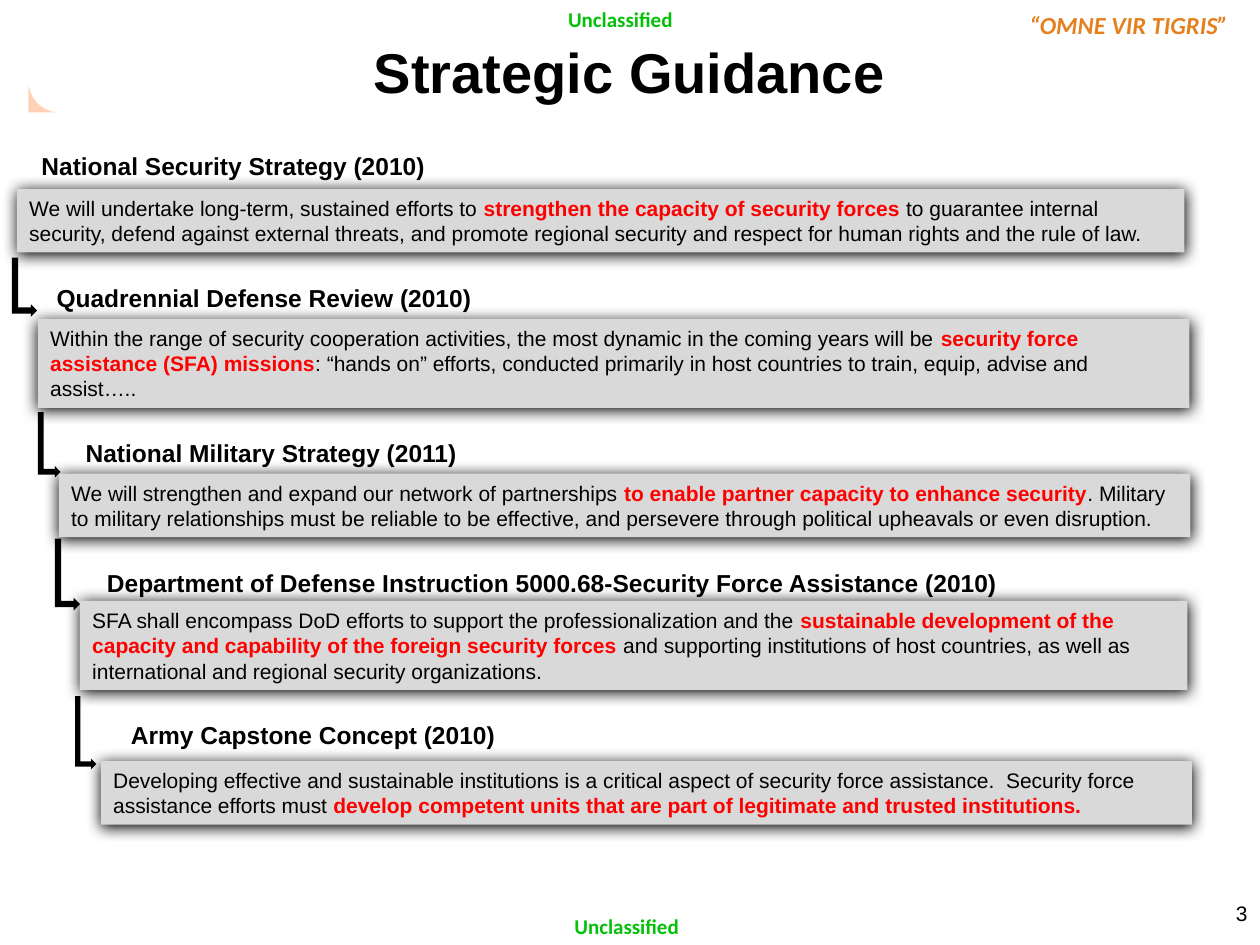
import pptx
import pptx.util
import pptx.dml.color
import pptx.enum.shapes
import pptx.enum.text
import pptx.oxml
import pptx.oxml.ns

Pt = pptx.util.Pt
RGB = pptx.dml.color.RGBColor
Shape = pptx.enum.shapes.MSO_SHAPE
Align = pptx.enum.text.PP_ALIGN

BLACK = RGB(0x00, 0x00, 0x00)
RED = RGB(0xFF, 0x00, 0x00)
GRAY = RGB(0xD9, 0xD9, 0xD9)
GREEN = RGB(0x04, 0xC0, 0x08)
ORANGE = RGB(0xE4, 0x81, 0x1E)
FLAME = RGB(0xFF, 0x66, 0x00)

# Heading, its (left, top, width); quote parts, their box (left, top, width, height)
# Every second part of a quote is stressed.
STEPS = [
    ("National Security Strategy (2010)", (16.6, 82.8, 703.4),
     ["We will undertake long-term, sustained efforts to ",
      "strengthen the capacity of security forces ",
      "to guarantee internal security, defend against external threats, and promote "
      "regional security and respect for human rights and the rule of law."],
     (9.6, 108, 667.2, 36.3)),
    ("Quadrennial Defense Review (2010)", (25.2, 158.4, 707),
     ["Within the range of security cooperation activities, the most dynamic in the "
      "coming years will be ",
      "security force assistance (SFA) missions",
      ": “hands on” efforts, conducted primarily in host countries to train, equip, "
      "advise and assist….."],
     (21.6, 182.2, 658, 50.9)),
    ("National Military Strategy (2011)", (41.8, 247, 690.5),
     ["We will strengthen and expand our network of partnerships ",
      "to enable partner capacity to enhance security",
      ". Military to military relationships must be reliable to be effective, and "
      "persevere through political upheavals or even disruption."],
     (33.6, 270.7, 646.6, 36.3)),
    ("Department of Defense Instruction 5000.68-Security Force Assistance (2010)",
     (54, 321.1, 591.1),
     ["SFA shall encompass DoD efforts to support the professionalization and the ",
      "sustainable development of the capacity and capability of the foreign "
      "security forces ",
      "and supporting institutions of host countries, as well as international and "
      "regional security organizations."],
     (45.6, 343.4, 632.9, 50.9)),
    ("Army Capstone Concept (2010)", (67.7, 408.2, 652.3),
     ["Developing effective and sustainable institutions is a critical aspect of "
      "security force assistance.  Security force assistance efforts must ",
      "develop competent units that are part of legitimate and trusted institutions."],
     (57.6, 434.9, 623.5, 36.3)),
]

# Left, top, width, height before the quarter turn
ARROWS = [(-2.9, 157, 33.8, 14.4), (9.4, 247.7, 37.4, 13),
          (18, 321.1, 41, 14.4), (28.1, 412.6, 41.8, 12.2)]

CORNER = [(16.3, 49), (16.3, 64.2), (32.4, 64.2), (29.5, 63.8), (25.2, 62),
          (21.6, 59.2), (19, 56), (17.6, 53)]

deck = pptx.Presentation()
deck.slide_width, deck.slide_height = Pt(720), Pt(540)
slide = deck.slides.add_slide(deck.slide_layouts[6])
shapes = slide.shapes


def style(run, size, color=BLACK, bold=False, face="Arial", italic=False):
    font = run.font
    font.name, font.size = face, Pt(size)
    font.bold, font.italic = bold, italic
    font.color.rgb = color


def label(text, box, size, align=Align.LEFT, wrap=True, **look):
    frame = shapes.add_textbox(*map(Pt, box)).text_frame
    frame.word_wrap = wrap
    frame.text = text
    line = frame.paragraphs[0]
    line.alignment = align
    style(line.runs[0], size, **look)


def paint(shape, color):
    shape.shadow.inherit = False
    shape.fill.solid()
    shape.fill.fore_color.rgb = color
    shape.line.fill.background()


def glow(shape):
    """Give the shape a soft black shadow just below it."""
    effects = shape._element.spPr.find(pptx.oxml.ns.qn("a:effectLst"))
    effects.append(pptx.oxml.parse_xml(
        f'<a:outerShdw {pptx.oxml.ns.nsdecls("a")} blurRad="{Pt(8.5)}" '
        f'dist="{Pt(1)}" dir="5400000" algn="t" rotWithShape="0">'
        '<a:srgbClr val="000000"/></a:outerShdw>'))


def quote(parts, box):
    shape = shapes.add_shape(Shape.RECTANGLE, *map(Pt, box))
    paint(shape, GRAY)
    glow(shape)
    frame = shape.text_frame
    frame.word_wrap = True
    line = frame.paragraphs[0]
    line.alignment = Align.LEFT
    for i, part in enumerate(parts):
        run = line.add_run()
        run.text = part
        stress = i % 2 == 1
        style(run, 12, RED if stress else BLACK, stress)


def corner():
    first, *rest = [(Pt(x), Pt(y)) for x, y in CORNER]
    pen = shapes.build_freeform(*first)
    pen.add_line_segments(rest, close=True)
    shape = pen.convert_to_shape()
    paint(shape, FLAME)
    color = shape._element.spPr.find(".//" + pptx.oxml.ns.qn("a:srgbClr"))
    color.append(pptx.oxml.parse_xml(
        f'<a:alpha {pptx.oxml.ns.nsdecls("a")} val="29000"/>'))


for left, top in [(317.5, 0), (321.1, 518.4)]:
    label("Unclassified", (left, top, 85, 21.6), 12, wrap=False,
          color=GREEN, bold=True, face="Calibri")
label("“OMNE VIR TIGRIS”", (570.2, 2.2, 149.8, 24.5), 14, Align.CENTER, wrap=False,
      color=ORANGE, bold=True, face="Calibri", italic=True)
corner()
label("Strategic Guidance", (131.8, 18, 455.8, 46.1), 32, Align.CENTER, bold=True)

for head, spot, parts, box in STEPS:
    label(head, (*spot, 24.5), 14, bold=True)
    quote(parts, box)

for box in ARROWS:
    arrow = shapes.add_shape(Shape.BENT_UP_ARROW, *map(Pt, box))
    arrow.rotation = 90
    paint(arrow, BLACK)

label("3", (552.2, 511.2, 167.8, 28.8), 12, Align.RIGHT)

deck.save("out.pptx")
